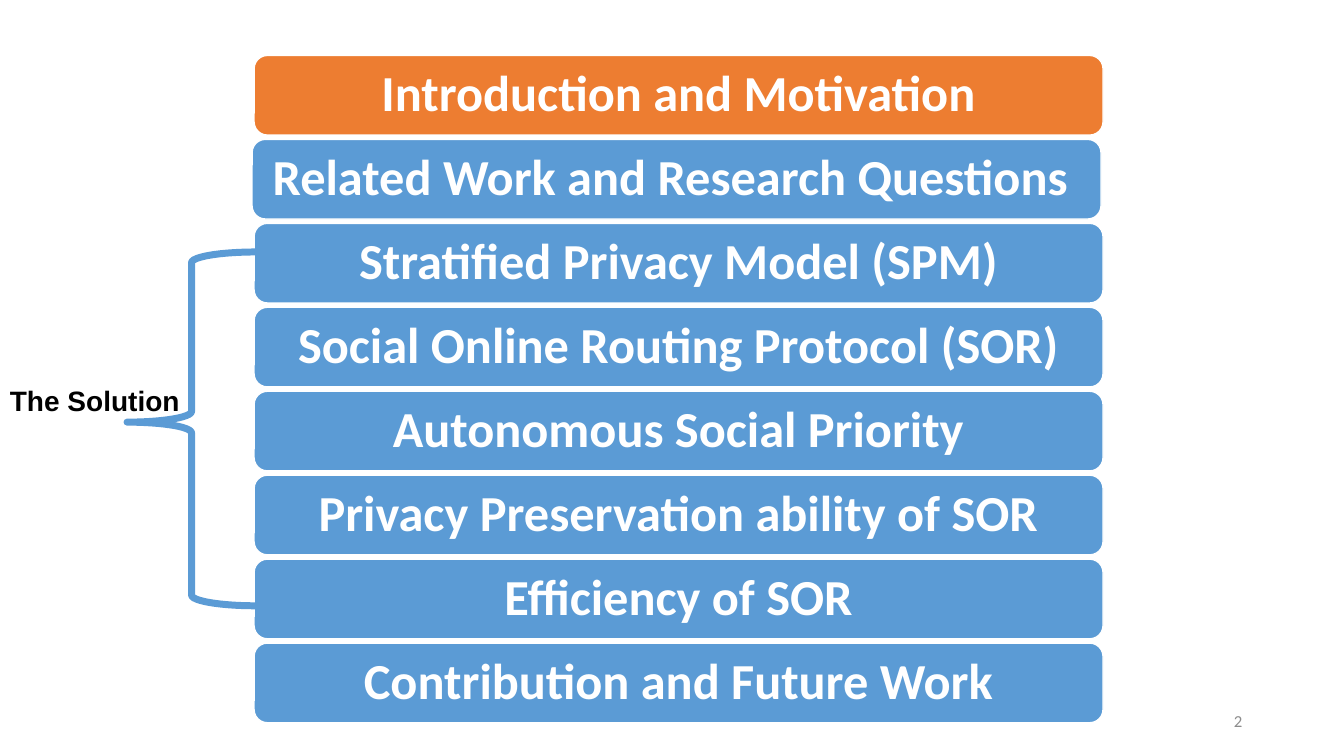
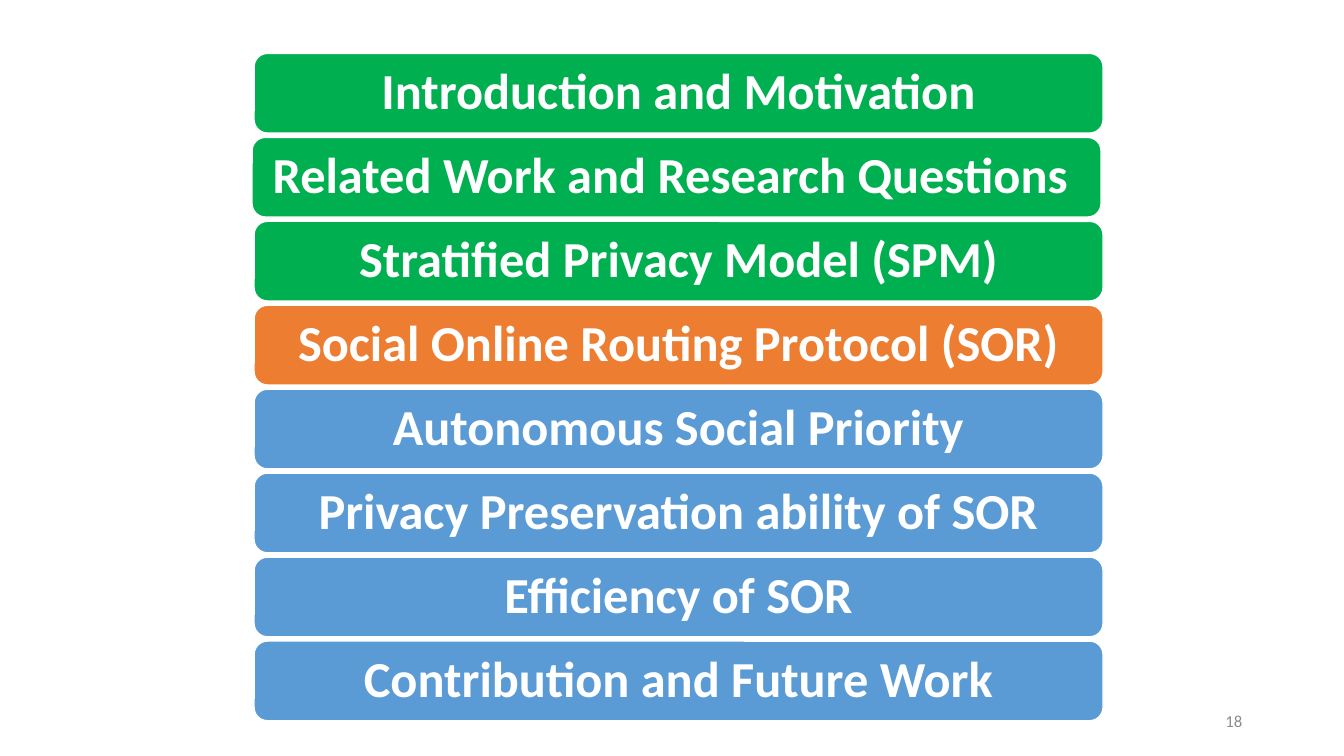
from pptx import Presentation
from pptx.dml.color import RGBColor
from pptx.enum.shapes import MSO_SHAPE
from pptx.enum.text import MSO_ANCHOR, PP_ALIGN
from pptx.util import Inches, Pt

ROUND = MSO_SHAPE.ROUNDED_RECTANGLE
BRACE = MSO_SHAPE.LEFT_BRACE
MIDDLE, TOP = MSO_ANCHOR.MIDDLE, MSO_ANCHOR.TOP
LEFT, CENTER, RIGHT = PP_ALIGN.LEFT, PP_ALIGN.CENTER, PP_ALIGN.RIGHT

# Shared colours: bars show what is done, current and still to come
DONE, NOW, NEXT = "00B050", "ED7D31", "5B9BD5"
WHITE, BLACK, GREY = "FFFFFF", "000000", "8C8C8C"

# Agenda entries, with how far each bar is moved left
TOPICS = [
    ("Introduction and Motivation", 0),
    ("Related Work and Research Questions", 0.02),
    ("Stratified Privacy Model (SPM)", 0),
    ("Social Online Routing Protocol (SOR)", 0),
    ("Autonomous Social Priority", 0),
    ("Privacy Preservation ability of SOR", 0),
    ("Efficiency of SOR", 0),
    ("Contribution and Future Work", 0),
]
BAR_H = 0.79


def color(code):
    return RGBColor.from_string(code)


def write(frame, text, size, code, font="Calibri", bold=False,
          align=LEFT, anchor=MIDDLE):
    frame.vertical_anchor = anchor
    para = frame.paragraphs[0]
    para.alignment = align
    run = para.add_run()
    run.text = text
    run.font.name = font
    run.font.size = Pt(size)
    run.font.bold = bold
    run.font.color.rgb = color(code)
    return para


def add_bar(slide, box, text, fill, shift):
    bar = slide.shapes.add_shape(ROUND, *map(Inches, box))
    bar.shadow.inherit = False
    bar.fill.solid()
    bar.fill.fore_color.rgb = color(fill)
    bar.line.color.rgb = color(WHITE)
    bar.line.width = Pt(1)
    frame = bar.text_frame
    frame.word_wrap = True
    # A shifted bar also has its text a little left of centre
    frame.margin_left = Inches(0.03 if shift else 0.15)
    frame.margin_right = Inches(0.15)
    frame.margin_top = frame.margin_bottom = Inches(0.07)
    para = write(frame, text, 36, WHITE, bold=True, align=CENTER)
    para.line_spacing = 0.9


def add_agenda(slide, box, now):
    left, top, width, height = box
    pitch = (height - BAR_H) / (len(TOPICS) - 1)
    for i, (text, shift) in enumerate(TOPICS):
        fill = DONE if i < now else NOW if i == now else NEXT
        place = (left - shift, top + i * pitch, width, BAR_H)
        add_bar(slide, place, text, fill, shift)


def add_number(slide, box, number):
    label = slide.shapes.add_textbox(*map(Inches, box))
    label.text_frame.word_wrap = True
    write(label.text_frame, str(number), 12, GREY, align=RIGHT)


def add_brace(slide, box, text):
    left, top, width, height = box
    brace = slide.shapes.add_shape(BRACE, *map(Inches, box))
    brace.shadow.inherit = False
    brace.adjustments[0] = 0.083
    brace.adjustments[1] = 0.481
    brace.fill.background()
    brace.line.color.rgb = color(NEXT)
    brace.line.width = Pt(5)
    # Label at the slide edge, above the tip of the brace
    place = (left - 1.26, top + 1.26, 1.9, 0.44)
    label = slide.shapes.add_textbox(*map(Inches, place))
    label.text_frame.word_wrap = False
    write(label.text_frame, text, 20, BLACK, "Arial", True, anchor=TOP)


def add_page(deck, top, now, number):
    slide = deck.slides.add_slide(deck.slide_layouts[6])
    add_agenda(slide, (2.52, top, 8.42, 6.62), now)
    add_number(slide, (9.42, 6.95, 3, 0.4), number)
    return slide


def main():
    deck = Presentation()
    deck.slide_width = Inches(13.33)
    deck.slide_height = Inches(7.5)
    first = add_page(deck, 0.55, 0, 2)
    add_brace(first, (1.26, 2.5, 1.28, 3.51), "The Solution")
    add_page(deck, 0.53, 3, 18)
    deck.save("out.pptx")


if __name__ == "__main__":
    main()
